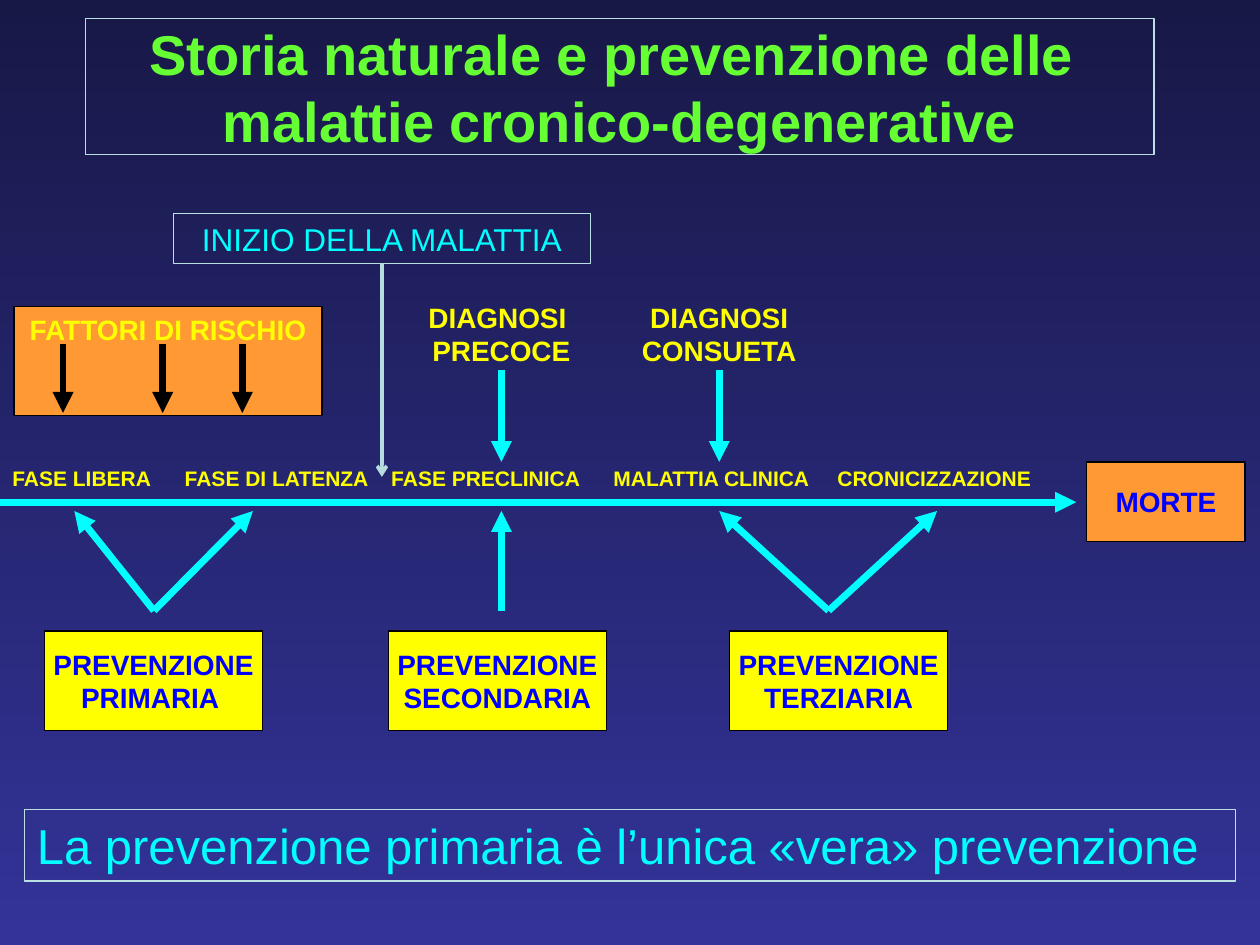
from dataclasses import dataclass

from lxml.etree import SubElement
from pptx import Presentation
from pptx.dml.color import RGBColor
from pptx.enum.shapes import MSO_CONNECTOR as Link, MSO_SHAPE as Preset
from pptx.enum.text import MSO_ANCHOR as Anchor, PP_ALIGN as Align
from pptx.oxml.ns import qn
from pptx.util import Pt


@dataclass(frozen=True)
class Theme:
    font: str = "Arial"
    night: str = "181847"
    indigo: str = "333399"
    frame: str = "BBE0E3"
    stem: str = "B6DCDF"
    green: str = "66FF33"
    cyan: str = "00FFFF"
    yellow: str = "FFFF00"
    orange: str = "FF9933"
    blue: str = "0000FF"
    black: str = "000000"
    title: int = 32
    closing: int = 28
    heading: int = 18
    label: int = 16
    phase: int = 12


@dataclass(frozen=True)
class Box:
    left: float
    top: float
    width: float
    height: float

    @property
    def right(self):
        return self.left + self.width

    @property
    def bottom(self):
        return self.top + self.height

    @property
    def center(self):
        return self.left + self.width / 2

    @property
    def middle(self):
        return self.top + self.height / 2

    def lengths(self):
        return [Pt(value) for value in (self.left, self.top, self.width, self.height)]


THEME = Theme()


def color(code):
    return RGBColor.from_string(code)


def write(shape, text, size=THEME.label, ink=THEME.yellow, bold=True,
          align=Align.CENTER, anchor=Anchor.MIDDLE, wrap=True):
    frame = shape.text_frame
    frame.word_wrap = wrap
    frame.vertical_anchor = anchor
    frame.text = text
    for para in frame.paragraphs:
        para.alignment = align
        for span in para.runs:
            span.font.name = THEME.font
            span.font.size = Pt(size)
            span.font.bold = bold
            span.font.color.rgb = color(ink)


def add_label(page, box, text, **style):
    write(page.shapes.add_textbox(*box.lengths()), text, **style)


def add_panel(page, box, text, fill=None, line=THEME.black, **style):
    panel = page.shapes.add_shape(Preset.RECTANGLE, *box.lengths())
    panel.shadow.inherit = False
    if fill:
        panel.fill.solid()
        panel.fill.fore_color.rgb = color(fill)
    else:
        panel.fill.background()
    panel.line.color.rgb = color(line)
    panel.line.width = Pt(0.75)
    write(panel, text, **style)
    return panel


def add_arrow(page, start, end, ink=THEME.cyan, weight=4, head="triangle"):
    arrow = page.shapes.add_connector(Link.STRAIGHT, *map(Pt, (*start, *end)))
    arrow.line.color.rgb = color(ink)
    arrow.line.width = Pt(weight)
    SubElement(arrow.line._get_or_add_ln(), qn("a:tailEnd"), type=head)
    SubElement(arrow._element.spPr, qn("a:effectLst"))
    return arrow


def paint_background(page):
    fill = page.background.fill
    fill.gradient()
    fill.gradient_angle = 270
    for stop, code in zip(fill.gradient_stops, (THEME.night, THEME.indigo)):
        stop.color.rgb = color(code)


def add_title(page, box):
    add_panel(page, box, "Storia naturale e prevenzione delle \vmalattie cronico-degenerative",
              line=THEME.frame, size=THEME.title, ink=THEME.green)


def add_onset(page, box, reach):
    panel = add_panel(page, box, "INIZIO DELLA MALATTIA", line=THEME.frame,
                      size=THEME.heading, ink=THEME.cyan, bold=False)
    stem = add_arrow(page, (box.center, box.bottom), (box.center, box.bottom + reach),
                     ink=THEME.stem, weight=2, head="arrow")
    stem.begin_connect(panel, 2)


def add_risk_factors(page, box):
    add_panel(page, box, "FATTORI DI RISCHIO", fill=THEME.orange, anchor=Anchor.TOP, wrap=False)
    for offset in (28, 85, 130.5):
        x = box.left + offset
        add_arrow(page, (x, box.top + 21.5), (x, box.bottom - 1.5), ink=THEME.black)


def add_diagnosis(page, box, text):
    add_label(page, box, text)
    add_arrow(page, (box.center, box.bottom), (box.center, box.bottom + 52.5))


def add_timeline(page, box):
    phases = {"FASE LIBERA": 0, "FASE DI LATENZA": 98.5, "FASE PRECLINICA": 216.5,
              "MALATTIA CLINICA": 343.5, "CRONICIZZAZIONE": 471.5}
    for text, left in phases.items():
        add_label(page, Box(box.left + left, box.top, 130, 22), text,
                  size=THEME.phase, align=Align.LEFT, wrap=False)
    add_arrow(page, (box.left, box.bottom), (box.right, box.bottom))


def add_death(page, box):
    add_panel(page, box, "MORTE", fill=THEME.orange, ink=THEME.blue, wrap=False)


def add_prevention(page, box, text, origin, targets):
    add_panel(page, box, text, fill=THEME.yellow, ink=THEME.blue, wrap=False)
    base = box.top - 11.5
    for target in targets:
        add_arrow(page, (origin, base), (target, base - 57))


def add_closing(page, box):
    add_panel(page, box, "La prevenzione primaria è l’unica «vera» prevenzione",
              line=THEME.frame, size=THEME.closing, ink=THEME.cyan, bold=False,
              align=Align.LEFT, anchor=Anchor.TOP)


def main():
    deck = Presentation()
    deck.slide_width, deck.slide_height = Pt(720), Pt(540)
    page = deck.slides.add_slide(deck.slide_layouts[6])
    paint_background(page)

    add_title(page, Box(49, 10.5, 610.5, 78))
    add_timeline(page, Box(0, 262, 615, 25))
    add_death(page, Box(621, 264, 90.5, 45.5))

    preventions = (
        (25.5, "PREVENZIONE\nPRIMARIA ", 88, (42.5, 144.5)),
        (222, "PREVENZIONE\nSECONDARIA", 286.5, (286.5,)),
        (417, "PREVENZIONE\nTERZIARIA", 473.5, (411, 535.5)),
    )
    for left, text, origin, targets in preventions:
        add_prevention(page, Box(left, 360.5, 124.5, 57), text, origin, targets)

    add_risk_factors(page, Box(8, 175, 176, 62.5))
    add_diagnosis(page, Box(224.5, 170, 124, 41.5), "DIAGNOSI \vPRECOCE")
    add_diagnosis(page, Box(354.5, 170, 113, 41.5), "DIAGNOSI CONSUETA")
    add_closing(page, Box(14, 462.5, 692, 41))
    add_onset(page, Box(99, 122, 238.5, 28.5), 122)
    deck.save("out.pptx")


if __name__ == "__main__":
    main()
